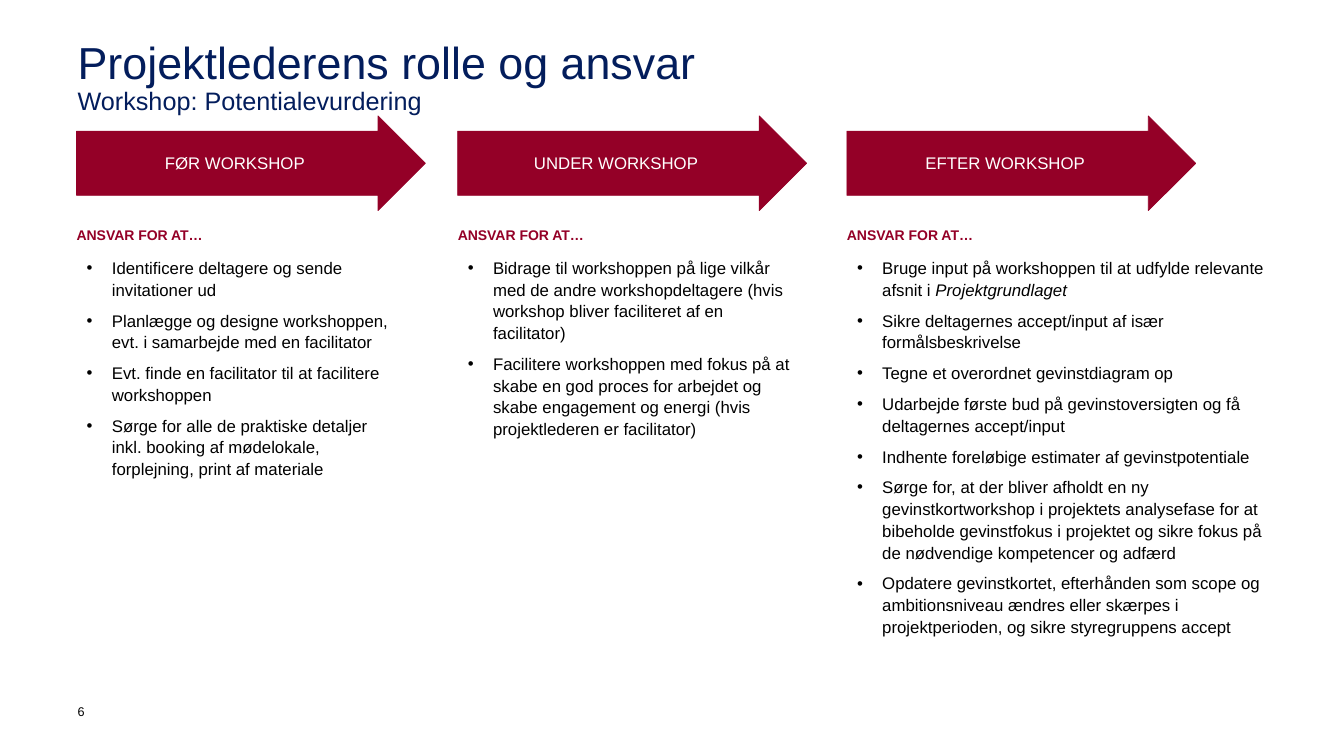
from pptx import Presentation
from pptx.dml.color import RGBColor
from pptx.enum.shapes import MSO_SHAPE
from pptx.enum.text import MSO_ANCHOR, MSO_AUTO_SIZE, PP_ALIGN
from pptx.oxml.ns import qn
from pptx.util import Inches, Pt
from lxml.etree import SubElement

NAVY, RED, BLACK, WHITE = "031D5C", "940027", "000000", "FFFFFF"

COLUMNS = [
    ("FØR WORKSHOP", 0.76, 3.31, 2.39, [
        "Identificere deltagere og sende invitationer ud",
        "Planlægge og designe workshoppen, evt. i samarbejde med en facilitator",
        "Evt. finde en facilitator til at facilitere workshoppen",
        "Sørge for alle de praktiske detaljer inkl. booking af mødelokale, "
        "forplejning, print af materiale",
    ]),
    ("UNDER WORKSHOP", 4.54, 3.46, 1.95, [
        "Bidrage til workshoppen på lige vilkår med de andre workshopdeltagere "
        "(hvis workshop bliver faciliteret af en facilitator)",
        "Facilitere workshoppen med fokus på at skabe en god proces for arbejdet "
        "og skabe engagement og energi (hvis projektlederen er facilitator)",
    ]),
    ("EFTER WORKSHOP", 8.4, 4.41, 4.34, [
        ("Bruge input på workshoppen til at udfylde relevante afsnit i ",
         "Projektgrundlaget"),
        "Sikre deltagernes accept/input af især formålsbeskrivelse",
        "Tegne et overordnet gevinstdiagram op",
        "Udarbejde første bud på gevinstoversigten og få deltagernes accept/input",
        "Indhente foreløbige estimater af gevinstpotentiale",
        "Sørge for, at der bliver afholdt en ny gevinstkortworkshop i projektets "
        "analysefase for at bibeholde gevinstfokus i projektet og sikre fokus på "
        "de nødvendige kompetencer og adfærd",
        "Opdatere gevinstkortet, efterhånden som scope og ambitionsniveau ændres "
        "eller skærpes i projektperioden, og sikre styregruppens accept",
    ]),
]


def rgb(color):
    return RGBColor.from_string(color)


def add_run(p, text, size, color, bold=False, italic=False):
    r = p.add_run()
    r.text = text
    f = r.font
    f.name, f.size, f.bold, f.italic = "Arial", Pt(size), bold, italic
    f.color.rgb = rgb(color)


def place(sp, left, top, width, height):
    sp.left, sp.top = Inches(left), Inches(top)
    sp.width, sp.height = Inches(width), Inches(height)


def set_frame(sp, x=0.0, y=0.0, anchor=MSO_ANCHOR.TOP):
    tf = sp.text_frame
    tf.word_wrap = True
    tf.auto_size = MSO_AUTO_SIZE.NONE
    tf.vertical_anchor = anchor
    tf.margin_left = tf.margin_right = Inches(x)
    tf.margin_top = tf.margin_bottom = Inches(y)
    return tf


def add_label(s, box, text, size, color, bold=False):
    sp = s.shapes.add_textbox(*map(Inches, box))
    add_run(set_frame(sp).paragraphs[0], text, size, color, bold)


def add_arrow(s, left, text):
    sp = s.shapes.add_shape(MSO_SHAPE.RIGHT_ARROW, *map(Inches, (left, 1.15, 3.46, 0.94)))
    sp.adjustments[0], sp.adjustments[1] = 0.678, 0.5
    sp.shadow.inherit = False
    sp.fill.solid()
    sp.fill.fore_color.rgb = rgb(RED)
    sp.line.color.rgb = rgb(RED)
    sp.line.width = Pt(0.5)
    p = set_frame(sp, 0.1, 0.05, MSO_ANCHOR.MIDDLE).paragraphs[0]
    p.alignment = PP_ALIGN.CENTER
    add_run(p, text, 12, WHITE)


def add_bullet(p):
    pPr = p._p.get_or_add_pPr()
    pPr.set("marL", str(Inches(0.25)))
    pPr.set("indent", str(Inches(-0.25)))
    SubElement(pPr, qn("a:buFont")).set("typeface", "Arial")
    SubElement(pPr, qn("a:buChar")).set("char", "•")


def fill_list(sp, box, items):
    place(sp, *box)
    tf = set_frame(sp, 0.1, 0.05)
    for i, item in enumerate(items):
        p = tf.add_paragraph() if i else tf.paragraphs[0]
        add_bullet(p)
        p.line_spacing = 1.08
        p.space_before = Pt(6.5 if i else 0)
        text, emphasis = item if isinstance(item, tuple) else (item, "")
        add_run(p, text, 12, BLACK)
        if emphasis:
            add_run(p, emphasis, 12, BLACK, italic=True)


def fill_title(sp, title, subtitle):
    place(sp, 0.77, 0.4, 11.8, 1.02)
    tf = set_frame(sp)
    tf.margin_right = Inches(1.13)
    p = tf.paragraphs[0]
    p.alignment = PP_ALIGN.LEFT
    p.line_spacing = 0.9
    add_run(p, title, 32, NAVY)
    p.add_line_break()
    add_run(p, subtitle, 18, NAVY)


def main():
    prs = Presentation()
    prs.slide_width, prs.slide_height = Inches(13.33), Inches(7.5)
    s = prs.slides.add_slide(prs.slide_layouts.get_by_name("Comparison"))
    title, *bodies, spare = s.placeholders
    spare.element.getparent().remove(spare.element)

    fill_title(title, "Projektlederens rolle og ansvar", "Workshop: Potentialevurdering")
    for body, (phase, left, width, height, items) in zip(bodies, COLUMNS):
        add_arrow(s, left, phase)
        add_label(s, (left, 2.25, 2.99, 0.34), "ANSVAR FOR AT…", 10, RED, bold=True)
        fill_list(body, (left, 2.49, width, height), items)
    add_label(s, (0.77, 6.98, 0.31, 0.39), "6", 9, BLACK)
    prs.save("out.pptx")


if __name__ == "__main__":
    main()
